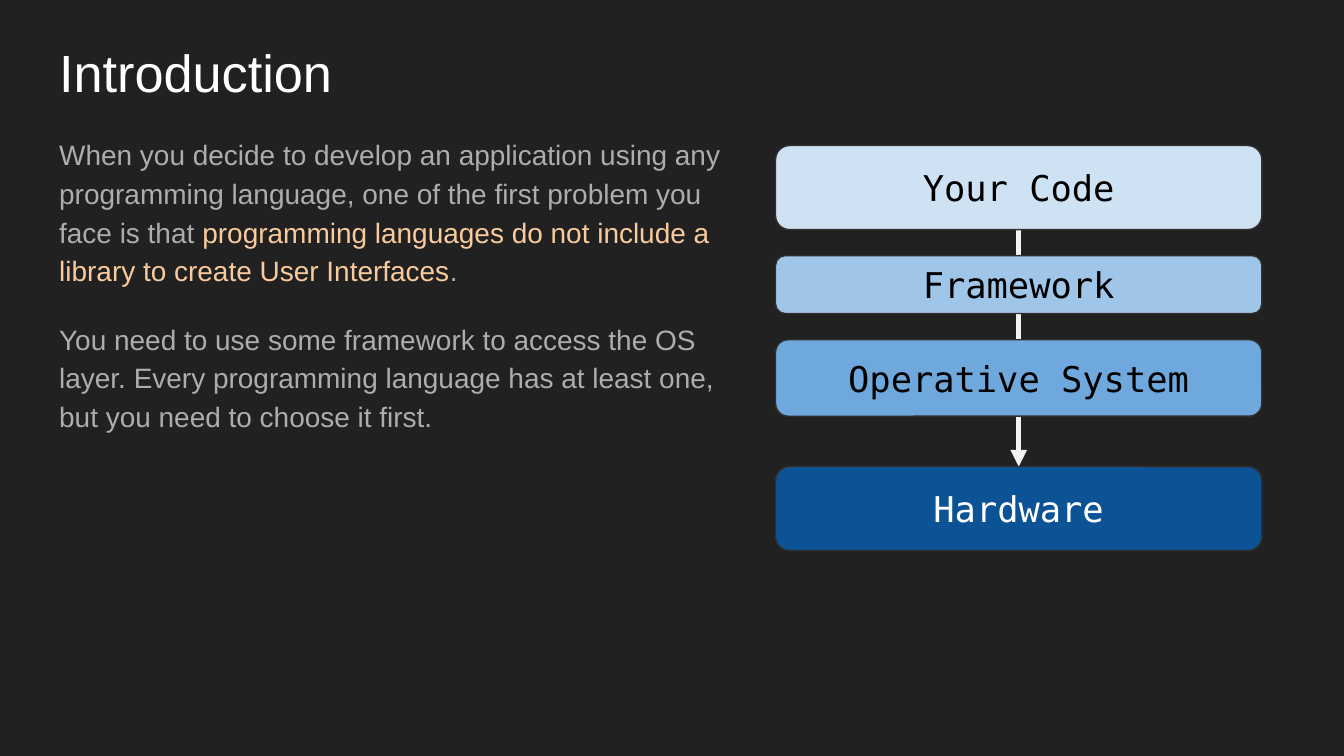
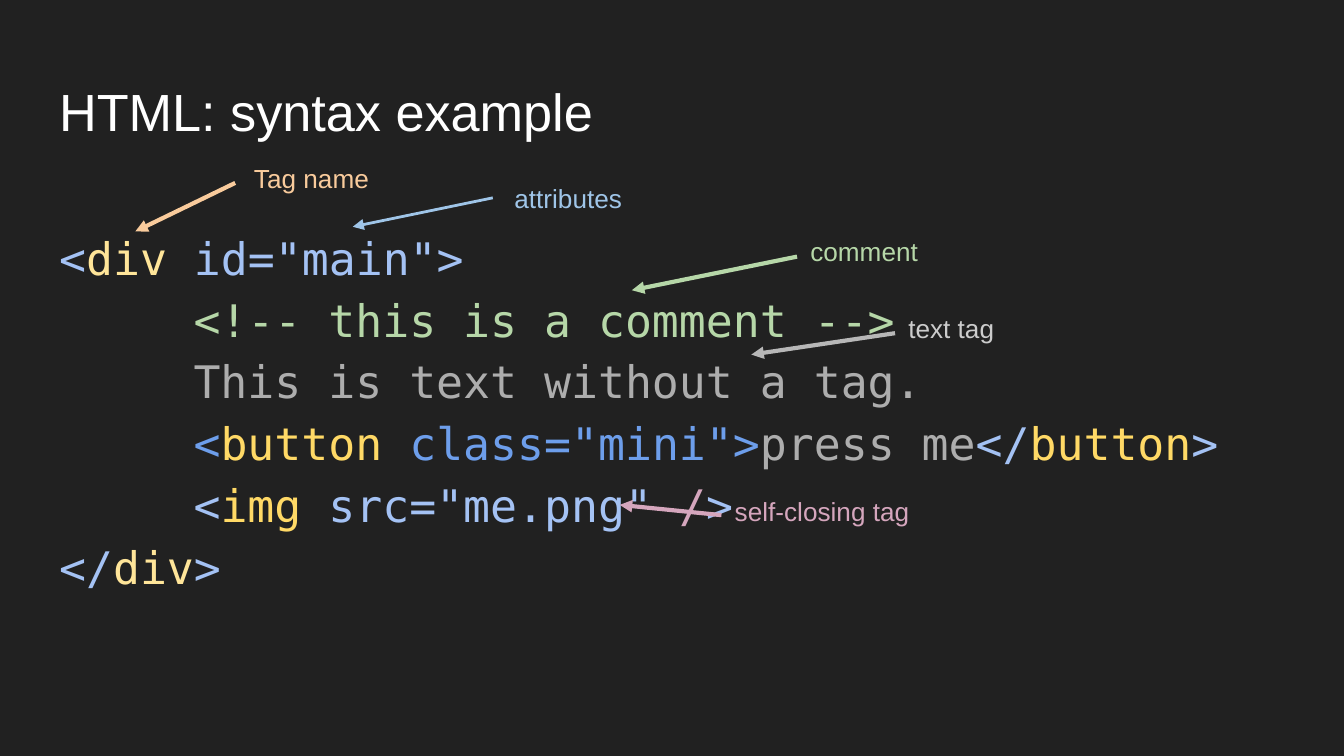
"""Build two dark slides: a software layer stack and an annotated HTML example."""

from dataclasses import dataclass

from lxml.etree import SubElement
from pptx import Presentation
from pptx.dml.color import RGBColor
from pptx.enum.shapes import MSO_CONNECTOR, MSO_SHAPE
from pptx.enum.text import MSO_ANCHOR, MSO_AUTO_SIZE, PP_ALIGN
from pptx.oxml.ns import qn
from pptx.util import Pt


@dataclass(frozen=True)
class Theme:
    background: str = "212121"
    outline: str = "303030"
    white: str = "FFFFFF"
    black: str = "000000"
    arrow: str = "F3F3F3"
    text: str = "ADADAD"
    orange: str = "F9CB9C"
    sky: str = "9FC5E8"
    green: str = "B6D7A8"
    silver: str = "B7B7B7"
    light_grey: str = "CCCCCC"
    pink: str = "D5A6BD"
    markup: str = "A4C2F4"
    button_markup: str = "6D9EEB"
    pale_yellow: str = "FFE599"
    yellow: str = "FFD966"
    sans: str = "Arial"
    mono: str = "DejaVu Sans Mono"
    title_size: float = 28
    body_size: float = 15
    code_size: float = 24
    layer_size: float = 19
    label_size: float = 14
    inset: float = 7.2
    line_spacing: float = 1.15


theme = Theme()


def write_text(shape, paragraphs, font, size, spacing=1.0, centred=False):
    """Fill a shape with paragraphs given as (space before, indent, runs)."""
    frame = shape.text_frame
    frame.word_wrap = True
    frame.auto_size = MSO_AUTO_SIZE.NONE
    frame.vertical_anchor = MSO_ANCHOR.MIDDLE if centred else MSO_ANCHOR.TOP
    frame.margin_left = frame.margin_right = Pt(theme.inset)
    frame.margin_top = frame.margin_bottom = Pt(theme.inset)
    for index, (space_before, indent, runs) in enumerate(paragraphs):
        paragraph = frame.add_paragraph() if index else frame.paragraphs[0]
        paragraph.alignment = PP_ALIGN.CENTER if centred else PP_ALIGN.LEFT
        paragraph.line_spacing = spacing
        paragraph.space_before = Pt(space_before)
        properties = paragraph._p.get_or_add_pPr()
        properties.set("marL", str(Pt(indent)))
        properties.set("indent", "0")
        SubElement(properties, qn("a:buNone"))
        paragraph.font.name = font
        paragraph.font.size = Pt(size)
        for text, colour in runs:
            run = paragraph.add_run()
            run.text = text
            target = paragraph if len(runs) == 1 else run
            target.font.color.rgb = RGBColor.from_string(colour)


def add_arrow(slide, start, end, colour, width):
    """Add a straight line with a triangle at its end."""
    arrow = slide.shapes.add_connector(
        MSO_CONNECTOR.STRAIGHT, *(Pt(value) for value in (*start, *end))
    )
    arrow.line.color.rgb = RGBColor.from_string(colour)
    arrow.line.width = Pt(width)
    SubElement(arrow.line._get_or_add_ln(), qn("a:tailEnd"), type="triangle")
    SubElement(arrow._element.spPr, qn("a:effectLst"))
    return arrow


presentation = Presentation()
presentation.slide_width, presentation.slide_height = Pt(720), Pt(405)
background = presentation.slide_master.background.fill
background.solid()
background.fore_color.rgb = RGBColor.from_string(theme.background)

introduction = [
    (0, 0, [
        ("When you decide to develop an application using any programming language, "
         "one of the first problem you face is that ", theme.text),
        ("programming languages do not include a library to create User Interfaces",
         theme.orange),
        (".", theme.text),
    ]),
    (16, 0, [
        ("You need to use some framework to access the OS layer. Every programming "
         "language has at least one, but you need to choose it first.", theme.text),
    ]),
]
code = [
    (0, 0, [("<", theme.markup), ("div", theme.pale_yellow), (' id="main">', theme.markup)]),
    (0, 72, [("<!-- this is a comment -->", theme.green)]),
    (0, 72, [("This is text without a tag.", theme.text)]),
    (0, 72, [
        ("<", theme.button_markup), ("button", theme.yellow),
        (' class="mini">', theme.button_markup), ("press me", theme.text),
        ("</", theme.markup), ("button", theme.yellow), (">", theme.markup),
    ]),
    (0, 72, [
        ("<", theme.markup), ("img", theme.yellow), (' src="me.png" ', theme.markup),
        ("/", theme.pink), (">", theme.markup),
    ]),
    (0, 0, [("</", theme.markup), ("div", theme.pale_yellow), (">", theme.markup)]),
]

pages = [
    ("Introduction", (24.5, 14.5, 335.5, 45), (24.5, 64, 375, 318),
     introduction, theme.sans, theme.body_size),
    ("HTML: syntax example", (24.5, 35, 671, 45), (24.5, 112, 671, 248),
     code, theme.mono, theme.code_size),
]
for title, title_box, body_box, paragraphs, font, size in pages:
    slide = presentation.slides.add_slide(presentation.slide_layouts[1])
    heading, body = slide.placeholders
    for shape, box in ((heading, title_box), (body, body_box)):
        shape.left, shape.top, shape.width, shape.height = (Pt(value) for value in box)
    write_text(heading, [(0, 0, [(title, theme.white)])], theme.sans, theme.title_size)
    write_text(body, paragraphs, font, size, theme.line_spacing)

stack_slide, syntax_slide = presentation.slides

stack_arrow = add_arrow(stack_slide, (545.75, 123), (545.75, 250), theme.arrow, 3)
layers = [
    ("Your Code", 78, 45, "CFE2F3", theme.black),
    ("Framework", 137, 31, theme.sky, theme.black),
    ("Operative System", 182, 41, "6FA8DC", theme.black),
    ("Hardware", 250, 45, "0B5394", theme.white),
]
layer_shapes = []
for name, top, height, fill, colour in layers:
    layer = stack_slide.shapes.add_shape(
        MSO_SHAPE.ROUNDED_RECTANGLE, Pt(415.5), Pt(top), Pt(260.5), Pt(height)
    )
    layer.shadow.inherit = False
    layer.fill.solid()
    layer.fill.fore_color.rgb = RGBColor.from_string(fill)
    layer.line.color.rgb = RGBColor.from_string(theme.outline)
    layer.line.width = Pt(0.75)
    write_text(layer, [(0, 0, [(name, colour)])], theme.mono, theme.layer_size, centred=True)
    layer_shapes.append(layer)
stack_arrow.begin_connect(layer_shapes[0], 2)
stack_arrow.end_connect(layer_shapes[-1], 0)

annotations = [
    ("Tag name", (129, 80, 80.5, 26), theme.orange,
     (126, 98), (72.5, 124), theme.orange, 2.25),
    ("attributes", (268.5, 90.5, 77, 29.5), theme.sky,
     (264, 106), (189, 121.5), theme.sky, 1.5),
    ("comment", (427, 119, 200, 37), theme.green,
     (427, 137.5), (338.5, 155.5), theme.green, 2.25),
    ("text tag", (479.5, 160, 240, 37), theme.light_grey,
     (479.5, 178.5), (402.5, 190), theme.silver, 2.25),
    ("self-closing tag", (386.5, 258, 270, 37), theme.pink,
     (386.5, 276), (332, 270.5), theme.pink, 2.25),
]
for text, box, colour, start, end, arrow_colour, width in annotations:
    add_arrow(syntax_slide, start, end, arrow_colour, width)
    label = syntax_slide.shapes.add_textbox(*(Pt(value) for value in box))
    write_text(label, [(0, 0, [(text, colour)])], theme.sans, theme.label_size)

presentation.save("out.pptx")
